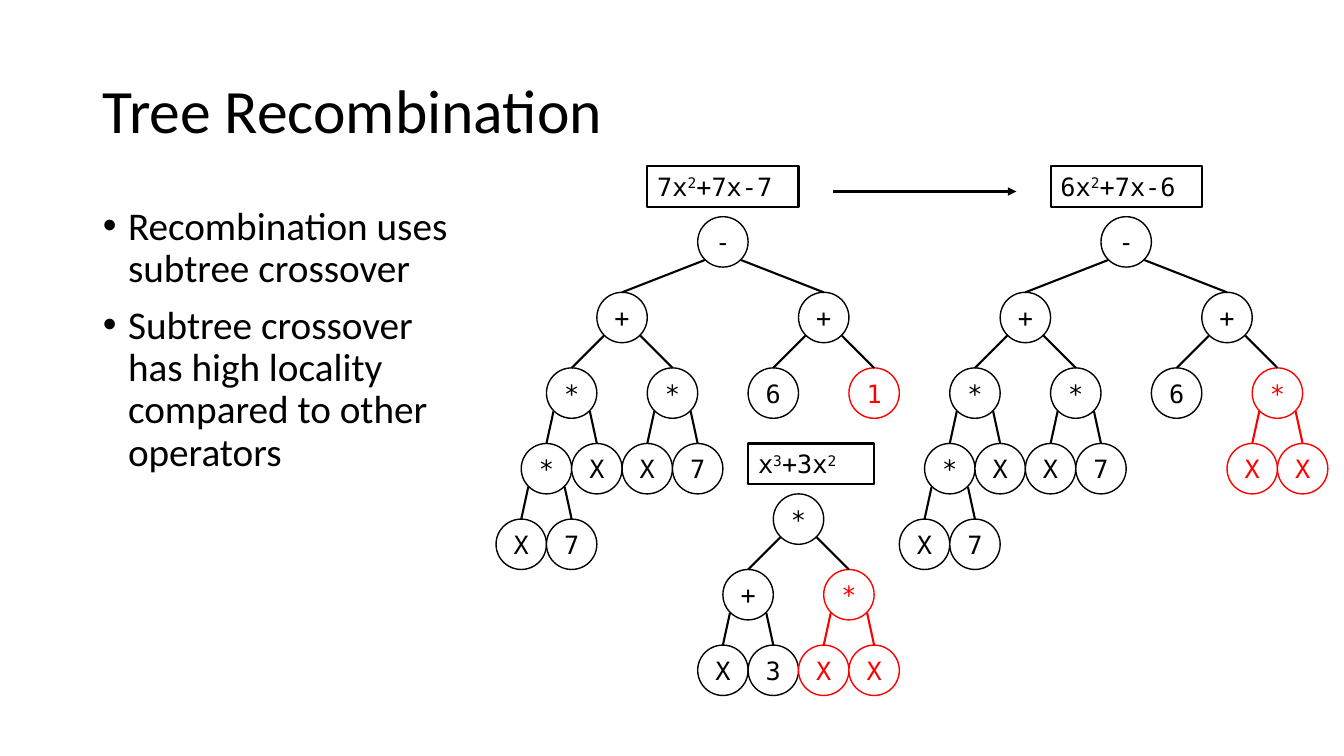
from collections import namedtuple

from lxml.etree import SubElement
from pptx import Presentation
from pptx.dml.color import RGBColor
from pptx.enum.shapes import MSO_CONNECTOR as Link, MSO_SHAPE as Shape
from pptx.enum.text import MSO_ANCHOR as Anchor, MSO_AUTO_SIZE as Fit, PP_ALIGN as Align
from pptx.oxml.ns import qn
from pptx.util import Pt

PX = 9144
BLACK, RED, WHITE = "000000", "FF0000", "FFFFFF"
SANS, MONO = "Calibri", "DejaVu Sans Mono"
SIZE, DROP, EDGE = 50, 75, 18

Node = namedtuple("Node", "text kids hue", defaults=((), BLACK))


def px(*nums):
    return [n * PX for n in nums]


def paint(target, hue):
    target.rgb = RGBColor.from_string(hue)


def style(runs, face, size, hue):
    for run in runs:
        run.font.name = face
        run.font.size = Pt(size)
        paint(run.font.color, hue)


def outline(item, hue, width):
    paint(item.line.color, hue)
    item.line.width = Pt(width)


def fill_holder(holder, area, lines, size, anchor):
    holder.left, holder.top, holder.width, holder.height = px(*area)
    frame = holder.text_frame
    frame.text = "\n".join(lines)
    frame.auto_size = Fit.NONE
    frame.vertical_anchor = anchor
    for para in frame.paragraphs:
        para.alignment = Align.LEFT
        para.line_spacing = 0.9
        style(para.runs, SANS, size, BLACK)
    return frame.paragraphs


def add_list(holder, area, lines):
    for para in fill_holder(holder, area, lines, 28, Anchor.TOP):
        para.space_before = Pt(10)
        props = para._p.get_or_add_pPr()
        props.set("marL", str(25 * PX))
        props.set("indent", str(-25 * PX))
        SubElement(props, qn("a:buFont"), typeface="Arial")
        SubElement(props, qn("a:buChar"), char="•")


def add_line(slide, start, end, hue):
    line = slide.shapes.add_connector(Link.STRAIGHT, *px(*start, *end))
    outline(line, hue, 1.5)
    SubElement(line._element.spPr, qn("a:effectLst"))
    return line


def add_arrow(slide, start, end):
    line = add_line(slide, start, end, BLACK)
    SubElement(line.line._get_or_add_ln(), qn("a:tailEnd"), type="triangle")


def add_node(slide, node, x, y):
    half = SIZE // 2
    disc = slide.shapes.add_shape(Shape.OVAL, *px(x - half, y - half, SIZE, SIZE))
    disc.shadow.inherit = False
    disc.fill.solid()
    paint(disc.fill.fore_color, WHITE)
    outline(disc, node.hue, 1)
    frame = disc.text_frame
    frame.margin_left = frame.margin_right = frame.margin_top = frame.margin_bottom = 0
    frame.vertical_anchor = Anchor.MIDDLE
    frame.text = node.text
    para = frame.paragraphs[0]
    para.alignment = Align.CENTER
    style(para.runs, MONO, 18, node.hue)
    return disc


def add_tree(slide, node, x, y, gaps):
    disc = add_node(slide, node, x, y)
    for side, kid in zip((-1, 1), node.kids):
        kid_x, kid_y = x + side * gaps[0], y + DROP
        child = add_tree(slide, kid, kid_x, kid_y, gaps[1:])
        start = (x + side * EDGE, y + EDGE)
        line = add_line(slide, start, (kid_x, kid_y - SIZE // 2), node.hue)
        line.end_connect(child, 0)
    return disc


def add_term(slide, text, x, y, width):
    box = slide.shapes.add_shape(Shape.RECTANGLE, *px(x, y, width, 40))
    box.shadow.inherit = False
    box.fill.background()
    outline(box, BLACK, 1.5)
    frame = box.text_frame
    frame.vertical_anchor = Anchor.TOP
    para = frame.paragraphs[0]
    para.alignment = Align.LEFT
    for i, part in enumerate(text.split("^")):
        run = para.add_run()
        run.text = part
        if i % 2:
            run.font._element.set("baseline", "30000")
    style(para.runs, MONO, 18, BLACK)


def main():
    deck = Presentation()
    deck.slide_width, deck.slide_height = px(1333, 750)
    slide = deck.slides.add_slide(deck.slide_layouts[1])
    title, body = slide.placeholders
    fill_holder(title, (92, 40, 1150, 145), ["Tree Recombination"], 44, Anchor.MIDDLE)
    add_list(body, (92, 200, 390, 476), [
        "Recombination uses subtree crossover",
        "Subtree crossover has high locality compared to other operators",
    ])

    var, seven = Node("X"), Node("7")
    cube = Node("*", (Node("*", (var, seven)), var))
    left = Node("+", (cube, Node("*", (var, seven))))
    swap = Node("*", (Node("X", hue=RED), Node("X", hue=RED)), RED)
    one = Node("1", hue=RED)
    donor = Node("*", (Node("+", (var, Node("3"))), swap))

    pairs = [("7x^2^+7x-7", one, 717), ("6x^2^+7x-6", swap, 1117)]
    for text, leaf, x in pairs:
        root = Node("-", (left, Node("+", (Node("6"), leaf))))
        add_term(slide, text, x - 75, 165, 150)
        add_tree(slide, root, x, 240, (100, 50, 25, 25))
    add_term(slide, "x^3^+3x^2", 742, 440, 125)
    add_tree(slide, donor, 792, 515, (50, 25))
    add_arrow(slide, (826, 190), (1008, 190))
    deck.save("out.pptx")


if __name__ == "__main__":
    main()
